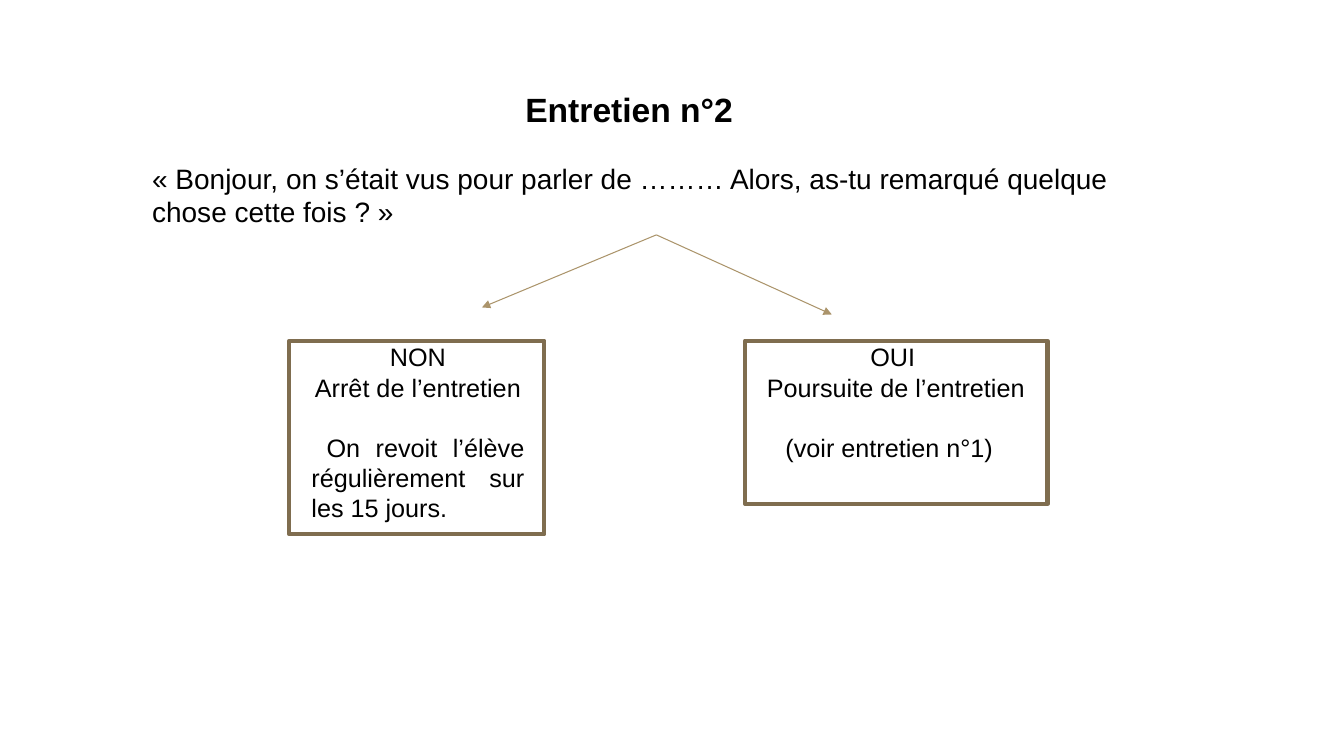
"""Build the slide showing the two outcomes of the second interview."""
from dataclasses import dataclass

from lxml import etree
from pptx import Presentation
from pptx.dml.color import RGBColor
from pptx.enum import shapes, text
from pptx.oxml import ns
from pptx.util import Inches, Pt

COLOURS = {"ink": "000000", "frame": "7F6D4F", "arrow": "AB946B"}
LEFT, CENTRE, JUSTIFY = (
    text.PP_ALIGN.LEFT, text.PP_ALIGN.CENTER, text.PP_ALIGN.JUSTIFY)


@dataclass(frozen=True)
class Line:
    """One paragraph, with its gap in points and its indents in inches."""
    words: str
    align: text.PP_ALIGN = CENTRE
    gap: float = 0
    first: float = 0
    left: float = 0
    right: float = 0


@dataclass(frozen=True)
class Outcome:
    """An answer with its frame, its text area and the end of its arrow."""
    frame: tuple[float, ...]
    area: tuple[float, ...]
    arrow_end: tuple[float, float]
    lines: tuple[Line, ...]


FORK = (6.51, 2.33)
QUESTION = Line("« Bonjour, on s’était vus pour parler de ……… Alors, "
                "as-tu remarqué quelque chose cette fois ? »", LEFT)
OUTCOMES = (
    Outcome((2.87, 3.38, 2.53, 1.92), (2.99, 3.34, 2.31, 1.92), (4.78, 3.05),
            (Line("NON"), Line("Arrêt de l’entretien"),
             Line("On revoit l’élève régulièrement sur les 15 jours.",
                  JUSTIFY, gap=21.5, first=0.15))),
    Outcome((7.39, 3.38, 3, 1.62), (5.52, 3.34, 6.67, 1.31), (8.25, 3.12),
            (Line("OUI"), Line("Poursuite de l’entretien", left=0.06),
             Line("(voir entretien n°1)", gap=21.5, right=0.07))),
)


def inches(values: tuple[float, ...]) -> list[int]:
    """Turn numbers into lengths."""
    return [Inches(value) for value in values]


def colour(name: str) -> RGBColor:
    """Look up a colour by its role."""
    return RGBColor.from_string(COLOURS[name])


def apply(target: object, values: dict[str, object]) -> None:
    """Set every named attribute on the target."""
    for name, value in values.items():
        setattr(target, name, value)


def write(holder, lines: tuple[Line, ...], size: float, bold: bool = False,
          wrap: bool = True) -> None:
    """Fill a text holder with formatted paragraphs."""
    frame = holder.text_frame
    frame.text = "\n".join(line.words for line in lines)
    apply(frame, {"word_wrap": wrap, "vertical_anchor": text.MSO_ANCHOR.TOP,
                  "auto_size": text.MSO_AUTO_SIZE.SHAPE_TO_FIT_TEXT})
    for paragraph, line in zip(frame.paragraphs, lines):
        apply(paragraph, {"alignment": line.align,
                          "space_before": Pt(line.gap)})
        indents = {"marL": line.left, "marR": line.right, "indent": line.first}
        for name, length in indents.items():
            paragraph._p.get_or_add_pPr().set(name, str(Inches(length)))
        apply(paragraph.font, {"name": "Arial", "size": Pt(size),
                               "bold": bold})
        paragraph.font.color.rgb = colour("ink")


def draw_arrow(slide, end: tuple[float, float]) -> None:
    """Draw an arrow from the fork to an outcome."""
    arrow = slide.shapes.add_connector(
        shapes.MSO_CONNECTOR.STRAIGHT, *inches(FORK + end))
    arrow.line.color.rgb = colour("arrow")
    arrow.line.width = Pt(0.75)
    head = etree.SubElement(arrow.line._get_or_add_ln(), ns.qn("a:tailEnd"))
    head.set("type", "triangle")
    etree.SubElement(arrow._element.spPr, ns.qn("a:effectLst"))


def draw_outcome(slide, outcome: Outcome) -> None:
    """Draw an outcome's frame, text and arrow."""
    frame = slide.shapes.add_shape(
        shapes.MSO_SHAPE.RECTANGLE, *inches(outcome.frame))
    frame.shadow.inherit = False
    frame.fill.background()
    frame.line.color.rgb = colour("frame")
    frame.line.width = Pt(3)
    write(slide.shapes.add_textbox(*inches(outcome.area)), outcome.lines, 18)
    draw_arrow(slide, outcome.arrow_end)


def main() -> None:
    """Build and save the slide."""
    deck = Presentation()
    apply(deck, {"slide_width": Inches(13.33), "slide_height": Inches(7.5)})
    slide = deck.slides.add_slide(deck.slide_layouts[5])
    heading = slide.shapes.title
    apply(heading, dict(zip(("left", "top", "width", "height"),
                            inches((5.1, 0.83, 2.28, 0.5)))))
    write(heading, (Line("Entretien n°2"),), 24, bold=True, wrap=False)
    question = slide.shapes.add_textbox(*inches((1.41, 1.55, 10.2, 0.77)))
    write(question, (QUESTION,), 20)
    for outcome in OUTCOMES:
        draw_outcome(slide, outcome)
    deck.save("out.pptx")


if __name__ == "__main__":
    main()
